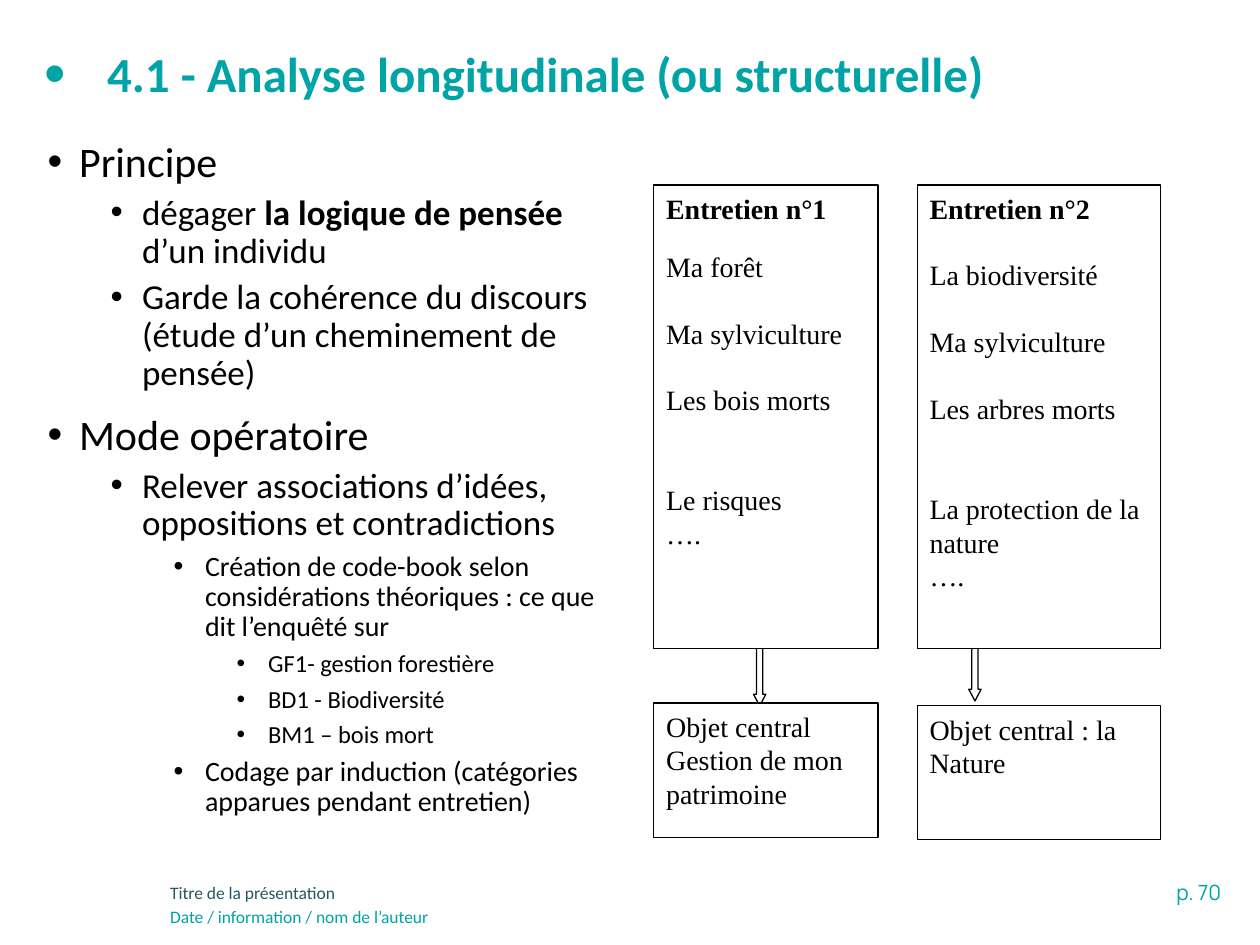
from pptx import Presentation
from pptx.dml.color import RGBColor
from pptx.enum.shapes import MSO_SHAPE
from pptx.enum.text import MSO_ANCHOR, PP_ALIGN
from pptx.oxml.ns import qn
from pptx.util import Cm, Pt
from lxml.etree import SubElement

TEAL = "00A3A6"
BLACK = "000000"


def style(p, size, font, color, bold=False):
    for r in p.runs:
        r.font.size = Pt(size)
        r.font.name = font
        r.font.bold = bold
        r.font.color.rgb = RGBColor.from_string(color)


def bullet(p, left, hang, scale=100):
    pPr = p._p.get_or_add_pPr()
    pPr.set("marL", str(Cm(left)))
    pPr.set("indent", str(-Cm(hang)))
    SubElement(pPr, qn("a:buSzPct"), val=str(scale * 1000))
    SubElement(pPr, qn("a:buFont"), typeface="Arial")
    SubElement(pPr, qn("a:buChar"), char="•")
    p.line_spacing = 0.9


prs = Presentation()
prs.slide_width, prs.slide_height = Cm(25.4), Cm(19.05)
s = prs.slides.add_slide(prs.slide_layouts[6])

# Footer and page number
footers = [
    ("p. 70", 19.08, 17.6, 5.79, 12, "Manrope", TEAL, PP_ALIGN.RIGHT),
    ("Titre de la présentation", 3.18, 17.65, 18.64, 10, "Calibri", "275662", PP_ALIGN.LEFT),
    ("Date / information / nom de l’auteur", 3.18, 18.14, 18.64, 10, "Calibri", TEAL, PP_ALIGN.LEFT),
]
for text, x, y, w, size, font, color, align in footers:
    tf = s.shapes.add_textbox(Cm(x), Cm(y), Cm(w), Cm(0.7)).text_frame
    tf.word_wrap = True
    tf.text = text
    p = tf.paragraphs[0]
    p.alignment = align
    style(p, size, font, color)

# Title
tf = s.shapes.add_textbox(Cm(0.89), Cm(0.74), Cm(23.29), Cm(1.6)).text_frame
tf.word_wrap = True
tf.vertical_anchor = MSO_ANCHOR.MIDDLE
tf.margin_left = 0
tf.text = "4.1 - Analyse longitudinale (ou structurelle)"
p = tf.paragraphs[0]
bullet(p, 1.27, 1.27, 125)
style(p, 28, "Calibri", TEAL, True)

# Outline: level and text, with bold between asterisks
outline = [
    (0, "Principe"),
    (1, "dégager *la logique de pensée *d’un individu"),
    (1, "Garde la cohérence du discours (étude d’un cheminement de pensée)"),
    (0, "Mode opératoire"),
    (1, "Relever associations d’idées, oppositions et contradictions"),
    (2, "Création de code-book selon considérations théoriques : ce que dit l’enquêté sur"),
    (3, "GF1- gestion forestière"),
    (3, "BD1 - Biodiversité"),
    (3, "BM1 – bois mort"),
    (2, "Codage par induction (catégories apparues pendant entretien)"),
]
sizes = [24, 20, 16, 14]
tf = s.shapes.add_textbox(Cm(0.71), Cm(2.72), Cm(11.61), Cm(14.17)).text_frame
tf.word_wrap = True
for i, (level, text) in enumerate(outline):
    p = tf.add_paragraph() if i else tf.paragraphs[0]
    p.level = level
    bullet(p, 0.635 + 1.27 * level, 0.635)
    if i:
        p.space_before = Pt(5 if level else 12)
    for part in text.split("*"):
        p.add_run().text = part
    style(p, sizes[level], "Calibri", BLACK)
    if len(p.runs) > 1:
        p.runs[1].font.bold = True

# Arrows and interview boxes: lines carry the space before them in points
GAP = 19
shapes = [
    (MSO_SHAPE.DOWN_ARROW, 15.19, 13.06, 0.25, 1.17, []),
    (MSO_SHAPE.DOWN_ARROW, 19.53, 12.78, 0.25, 1.35, []),
    (MSO_SHAPE.RECTANGLE, 13.18, 3.73, 4.52, 9.35, [
        ("Entretien n°1", 0), ("Ma forêt", 14), ("Ma sylviculture", GAP),
        ("Les bois morts", GAP), ("Le risques", 2 * GAP), ("….", 0)]),
    (MSO_SHAPE.RECTANGLE, 18.49, 3.73, 4.9, 9.35, [
        ("Entretien n°2", 0), ("La biodiversité", GAP), ("Ma sylviculture", GAP),
        ("Les arbres morts", GAP), ("La protection de la nature", 2 * GAP), ("….", 0)]),
    (MSO_SHAPE.RECTANGLE, 13.18, 14.17, 4.52, 2.72, [
        ("Objet central", 0), ("Gestion de mon patrimoine", 0)]),
    (MSO_SHAPE.RECTANGLE, 18.49, 14.23, 4.9, 2.69, [("Objet central : la Nature", 0)]),
]
for kind, x, y, w, h, lines in shapes:
    sp = s.shapes.add_shape(kind, Cm(x), Cm(y), Cm(w), Cm(h))
    sp.shadow.inherit = False
    sp.fill.solid()
    sp.fill.fore_color.rgb = RGBColor.from_string("FFFFFF")
    sp.line.color.rgb = RGBColor.from_string(BLACK)
    sp.line.width = Pt(0.75)
    if kind == MSO_SHAPE.DOWN_ARROW:
        sp.adjustments[1] = 0.94
    tf = sp.text_frame
    tf.word_wrap = True
    tf.vertical_anchor = MSO_ANCHOR.TOP
    for i, (text, gap) in enumerate(lines):
        p = tf.add_paragraph() if i else tf.paragraphs[0]
        p.text = text
        p.alignment = PP_ALIGN.LEFT
        if gap:
            p.space_before = Pt(gap)
        style(p, 16, "Times New Roman", BLACK, text.startswith("Entretien"))

prs.save("out.pptx")
